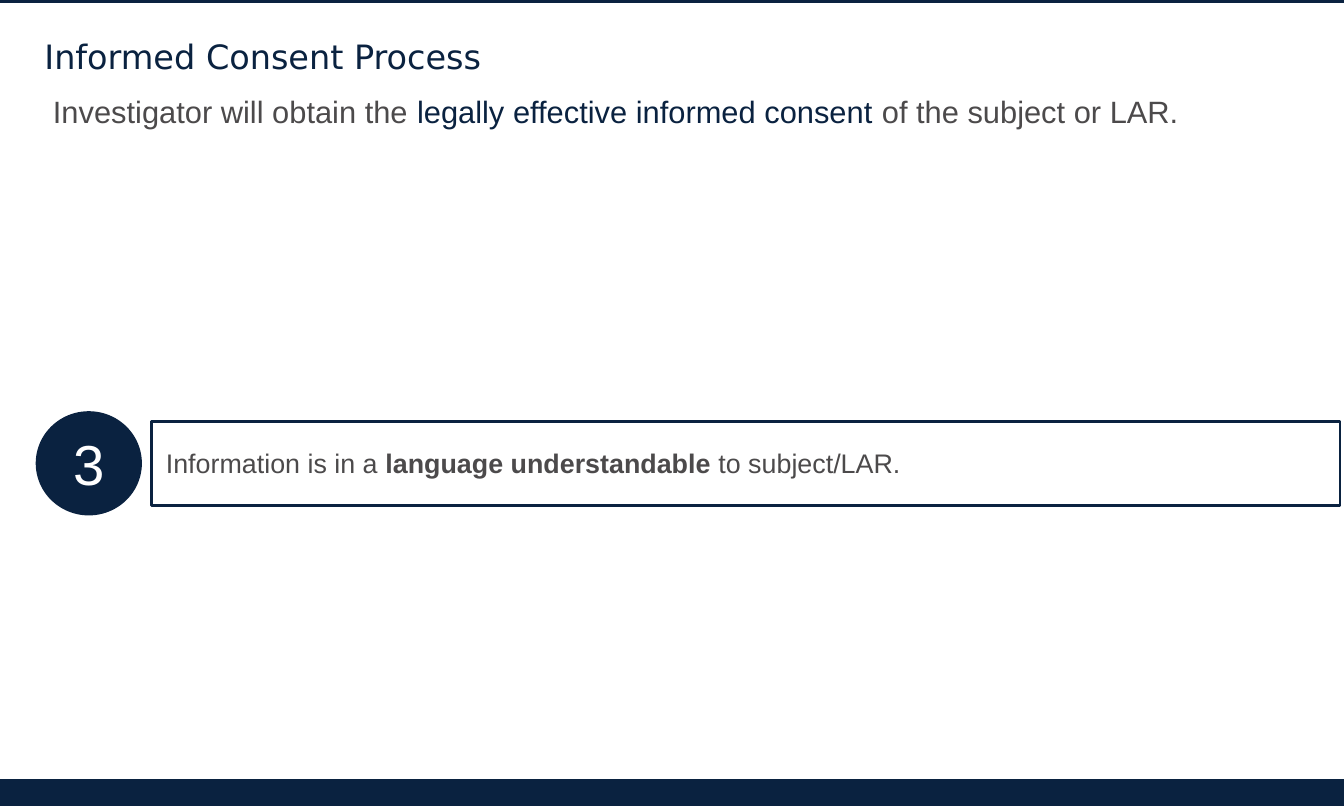
from dataclasses import dataclass

from pptx import Presentation
from pptx.dml.color import RGBColor
from pptx.enum.shapes import MSO_SHAPE
from pptx.enum.text import MSO_ANCHOR, MSO_AUTO_SIZE, PP_ALIGN
from pptx.util import Inches, Pt

RECTANGLE, OVAL = MSO_SHAPE.RECTANGLE, MSO_SHAPE.OVAL
MIDDLE = MSO_ANCHOR.MIDDLE
LEFT, CENTER = PP_ALIGN.LEFT, PP_ALIGN.CENTER
NO_AUTOFIT = MSO_AUTO_SIZE.NONE
TITLE_ONLY = 5


@dataclass(frozen=True)
class Theme:
    navy: RGBColor = RGBColor(0x0A, 0x22, 0x40)
    gray: RGBColor = RGBColor(0x4C, 0x4A, 0x4B)
    white: RGBColor = RGBColor(0xFF, 0xFF, 0xFF)
    heading_font: str = "DejaVu Sans"
    body_font: str = "Arial"
    title_size: float = 25
    statement_size: float = 23
    point_size: float = 20
    number_size: float = 42
    page_line: float = 4.5
    card_line: float = 2


class SlideBuilder:
    def __init__(self, slide, theme):
        self.slide = slide
        self.theme = theme

    def set_font(self, paragraph, size, color, name=None):
        font = paragraph.font
        font.name = name or self.theme.body_font
        font.size = Pt(size)
        font.color.rgb = color

    def title(self, wording, left, top, width, height):
        title = self.slide.shapes.title
        title.left, title.top = Inches(left), Inches(top)
        title.width, title.height = Inches(width), Inches(height)
        frame = title.text_frame
        frame.text = wording
        frame.auto_size = NO_AUTOFIT
        frame.vertical_anchor = MIDDLE
        frame.margin_left = frame.margin_right = 0
        frame.margin_top = frame.margin_bottom = 0
        paragraph = frame.paragraphs[0]
        paragraph.alignment = LEFT
        self.set_font(paragraph, self.theme.title_size, self.theme.navy,
                      self.theme.heading_font)

    def shape(self, kind, left, top, width, height, fill=None, line_width=None):
        shape = self.slide.shapes.add_shape(
            kind, Inches(left), Inches(top), Inches(width), Inches(height))
        shape.shadow.inherit = False
        if fill is None:
            shape.fill.background()
        else:
            shape.fill.solid()
            shape.fill.fore_color.rgb = fill
        if line_width is None:
            shape.line.fill.background()
        else:
            shape.line.color.rgb = self.theme.navy
            shape.line.width = Pt(line_width)
        return shape

    def number_badge(self, number, left, top, width, height):
        badge = self.shape(OVAL, left, top, width, height, self.theme.navy)
        badge.text_frame.text = number
        badge.text_frame.vertical_anchor = MIDDLE
        paragraph = badge.text_frame.paragraphs[0]
        paragraph.alignment = CENTER
        self.set_font(paragraph, self.theme.number_size, self.theme.white)

    def sentence(self, before, stressed, after, size, left, top, width, height,
                 color=None, bold=None):
        """Add one line of text whose middle part has its own colour or weight."""
        box = self.slide.shapes.add_textbox(
            Inches(left), Inches(top), Inches(width), Inches(height))
        box.text_frame.word_wrap = True
        paragraph = box.text_frame.paragraphs[0]
        self.set_font(paragraph, size, self.theme.gray)
        for part in (before, stressed, after):
            run = paragraph.add_run()
            run.text = part
            if part == stressed:
                run.font.bold = bold
                if color is not None:
                    run.font.color.rgb = color


def main():
    theme = Theme()
    deck = Presentation()
    deck.slide_width, deck.slide_height = Inches(13.92), Inches(8.35)
    slide = deck.slides.add_slide(deck.slide_layouts[TITLE_ONLY])
    builder = SlideBuilder(slide, theme)

    builder.shape(RECTANGLE, -0.03, 0, 14, 8.11, line_width=theme.page_line)
    builder.shape(RECTANGLE, -0.03, 8.1, 14, 0.31, theme.navy, theme.page_line)
    builder.title("Informed Consent Process", 0.46, 0.37, 9.48, 0.42)
    builder.sentence(
        "Investigator will obtain the ", "legally effective informed consent ",
        "of the subject or LAR.", theme.statement_size,
        0.45, 0.91, 12.78, 0.49, color=theme.navy)

    builder.sentence(
        "Information is in a ", "language understandable", " to subject/LAR.",
        theme.point_size, 1.62, 4.58, 12.3, 0.44, bold=True)
    builder.number_badge("3", 0.37, 4.26, 1.1, 1.08)
    builder.shape(RECTANGLE, 1.57, 4.37, 12.31, 0.87, line_width=theme.card_line)

    deck.save("out.pptx")


if __name__ == "__main__":
    main()
